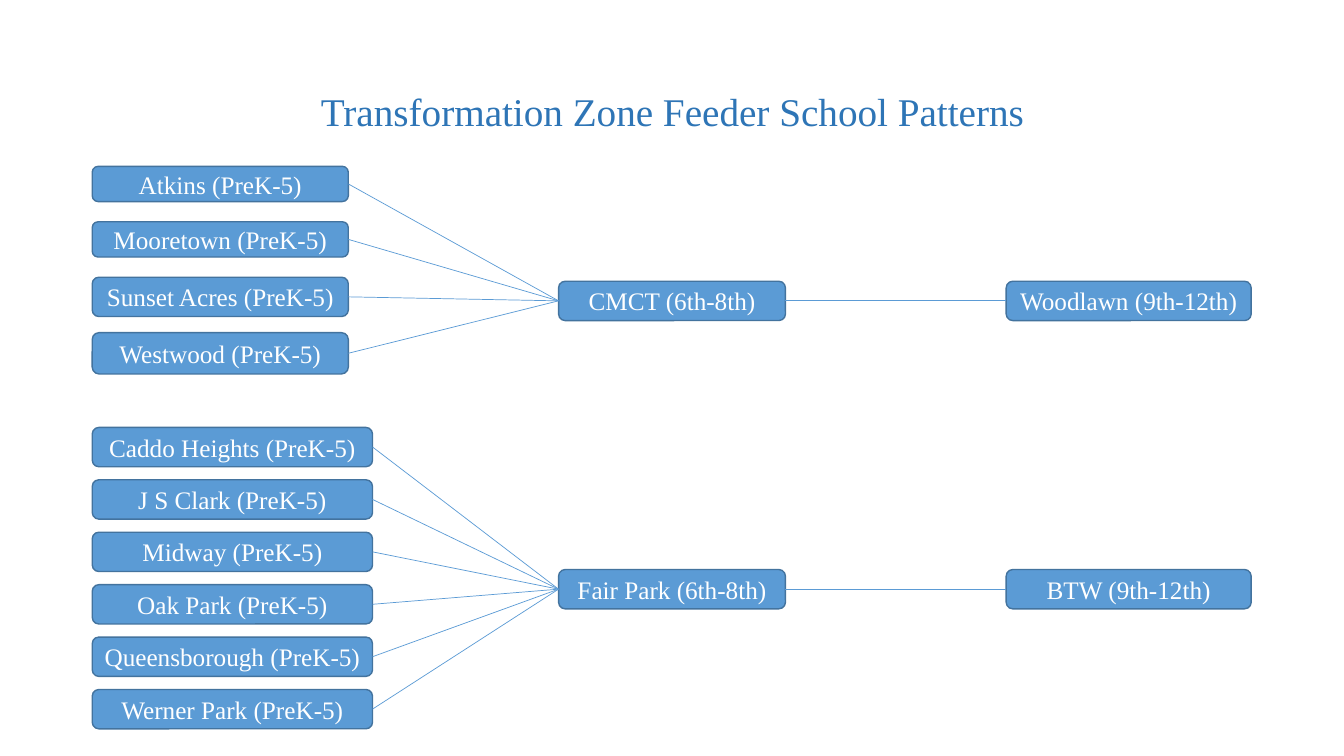
"""Build the feeder school slide: two zones of elementary, middle and high schools."""
import pptx
import pptx.dml.color
import pptx.enum.shapes
import pptx.enum.text
import pptx.oxml
import pptx.util

TITLE = "Transformation Zone Feeder School Patterns"
ZONES = [
    {
        "feeders": [("Atkins (PreK-5)", 0.35), ("Mooretown (PreK-5)", 0.35),
                    ("Sunset Acres (PreK-5)", 0.39), ("Westwood (PreK-5)", 0.41)],
        "top": 1.65, "pitch": 0.55, "width": 2.54,
        "middle": "CMCT (6th-8th)", "high": "Woodlawn (9th-12th)", "row": 2.79,
    },
    {
        "feeders": [(name, 0.39) for name in (
            "Caddo Heights (PreK-5)", "J S Clark (PreK-5)", "Midway (PreK-5)",
            "Oak Park (PreK-5)", "Queensborough (PreK-5)", "Werner Park (PreK-5)")],
        "top": 4.24, "pitch": 0.52, "width": 2.78,
        "middle": "Fair Park (6th-8th)", "high": "BTW (9th-12th)", "row": 5.65,
    },
]
COLUMNS = {"feeder": 0.915, "middle": 5.54, "high": 9.98}
WIDTHS = {"middle": 2.25, "high": 2.43}
BOX_HEIGHT = 0.39
COLORS = {"title": "2E75B6", "box": "5B9BD5", "edge": "43739E", "text": "FFFFFF"}
FONT = "Times New Roman"
LEFT_SIDE, RIGHT_SIDE = 1, 3
EMPTY_EFFECTS = ('<a:effectLst xmlns:a='
                 '"http://schemas.openxmlformats.org/drawingml/2006/main"/>')

Inches = pptx.util.Inches


def color(name):
    return pptx.dml.color.RGBColor.from_string(COLORS[name])


def write(shape, text, size, color_name):
    frame = shape.text_frame
    frame.text = text
    frame.word_wrap = True
    frame.vertical_anchor = pptx.enum.text.MSO_ANCHOR.MIDDLE
    para = frame.paragraphs[0]
    para.alignment = pptx.enum.text.PP_ALIGN.CENTER
    font = para.runs[0].font
    font.name = FONT
    font.size = pptx.util.Pt(size)
    font.color.rgb = color(color_name)
    return para


def add_school(page, name, left, top, width, height=BOX_HEIGHT):
    box = page.shapes.add_shape(
        pptx.enum.shapes.MSO_SHAPE.ROUNDED_RECTANGLE,
        Inches(left), Inches(top), Inches(width), Inches(height))
    box.shadow.inherit = False
    box.fill.solid()
    box.fill.fore_color.rgb = color("box")
    box.line.color.rgb = color("edge")
    box.line.width = pptx.util.Pt(1)
    write(box, name, 18, "text")
    box.text_frame.margin_left = box.text_frame.margin_right = Inches(0.05)
    return box


def join(page, source, target):
    line = page.shapes.add_connector(
        pptx.enum.shapes.MSO_CONNECTOR.STRAIGHT, 0, 0, 0, 0)
    line.begin_connect(source, RIGHT_SIDE)
    line.end_connect(target, LEFT_SIDE)
    line.line.color.rgb = color("box")
    line.line.width = pptx.util.Pt(0.5)
    line._element.spPr.append(pptx.oxml.parse_xml(EMPTY_EFFECTS))


def add_zone(page, zone):
    feeders = [
        add_school(page, name, COLUMNS["feeder"], zone["top"] + index * zone["pitch"],
                   zone["width"], height)
        for index, (name, height) in enumerate(zone["feeders"])]
    middle, high = [
        add_school(page, zone[level], COLUMNS[level], zone["row"], WIDTHS[level])
        for level in ("middle", "high")]
    for feeder in feeders:
        join(page, feeder, middle)
    join(page, middle, high)


def main():
    deck = pptx.Presentation()
    deck.slide_width, deck.slide_height = Inches(13.33), Inches(7.5)
    page = deck.slides.add_slide(deck.slide_layouts.get_by_name("Title Only"))
    title = page.shapes.title
    title.left, title.top = Inches(0.92), Inches(0.4)
    title.width, title.height = Inches(11.5), Inches(1.45)
    write(title, TITLE, 28, "title").line_spacing = 0.9
    for zone in ZONES:
        add_zone(page, zone)
    deck.save("out.pptx")


if __name__ == "__main__":
    main()
